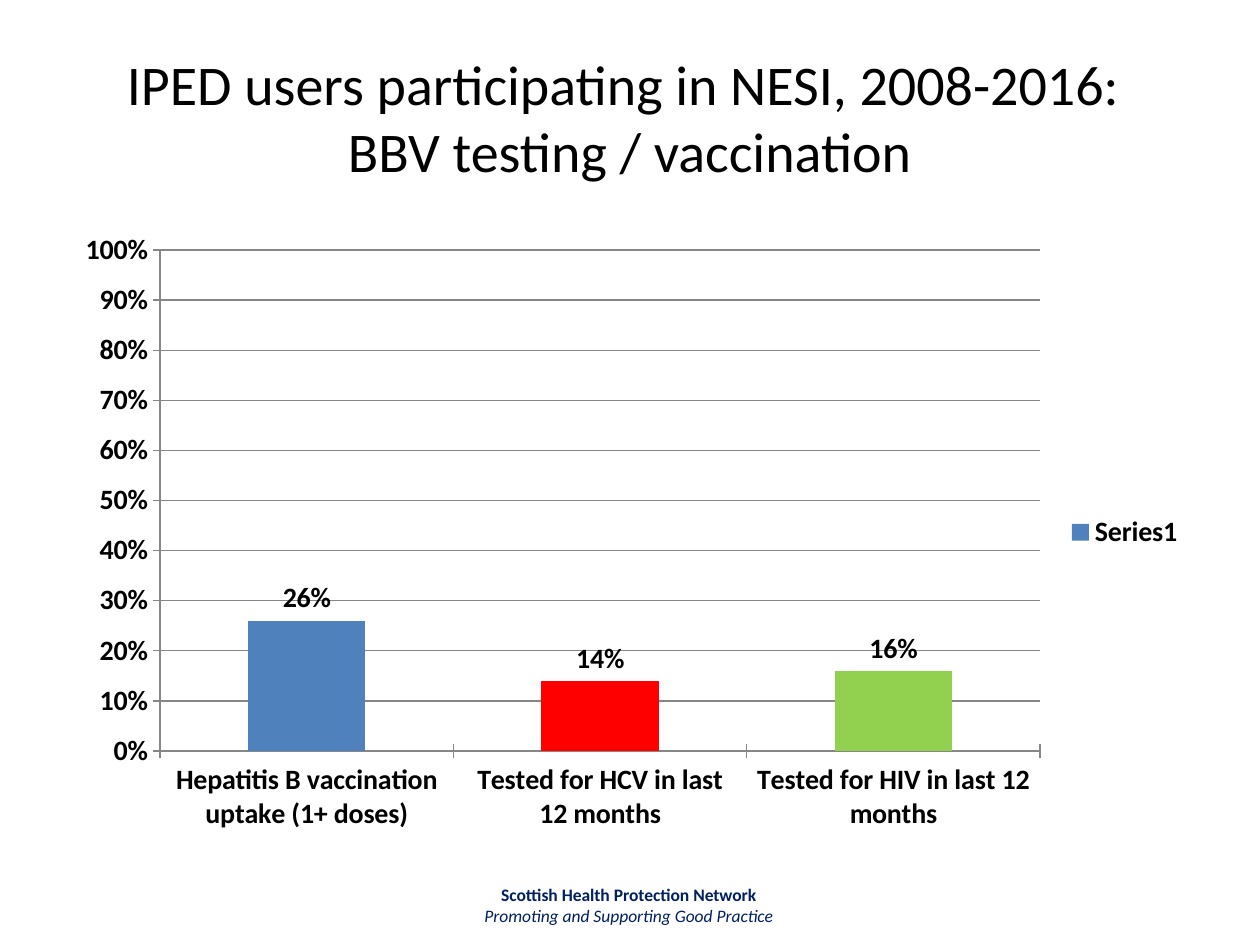
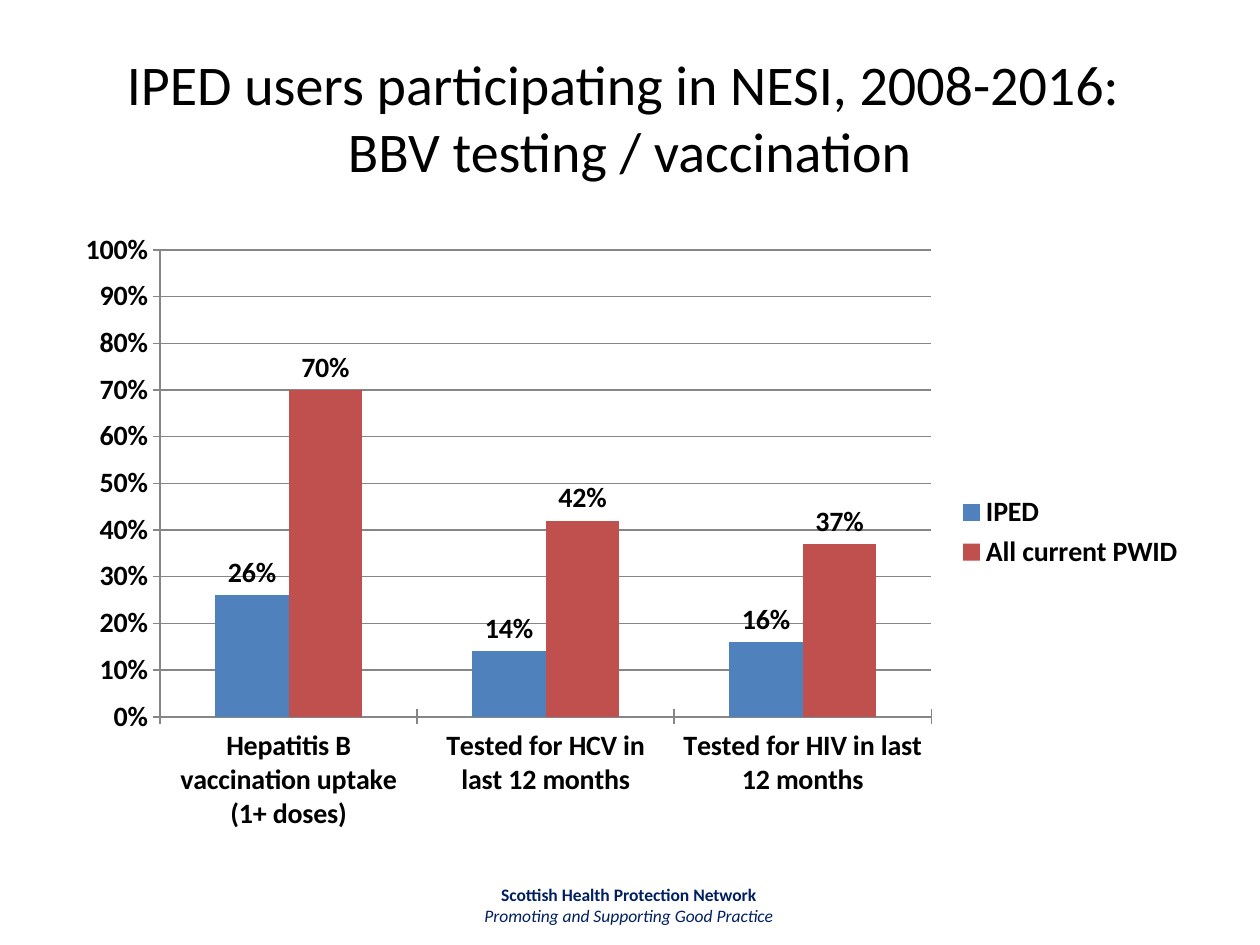
from dataclasses import dataclass, field

from pptx import Presentation
from pptx.chart.data import CategoryChartData
from pptx.dml.color import RGBColor
from pptx.enum.chart import XL_CHART_TYPE, XL_LABEL_POSITION, XL_LEGEND_POSITION, XL_TICK_MARK
from pptx.enum.text import MSO_ANCHOR, PP_ALIGN
from pptx.slide import Slide
from pptx.text.text import TextFrame
from pptx.util import Inches, Pt


@dataclass(frozen=True)
class Theme:
    font: str = "Calibri"
    text: RGBColor = RGBColor.from_string("000000")
    navy: RGBColor = RGBColor.from_string("002060")
    blue: RGBColor = RGBColor.from_string("4F81BD")
    brick: RGBColor = RGBColor.from_string("C0504D")
    red: RGBColor = RGBColor.from_string("FF0000")
    green: RGBColor = RGBColor.from_string("92D050")
    axis: RGBColor = RGBColor.from_string("868686")
    title_size: Pt = Pt(32)
    chart_size: Pt = Pt(16)
    footer_size: Pt = Pt(10)


@dataclass(frozen=True)
class Series:
    name: str
    values: tuple[float, ...]
    color: RGBColor
    point_colors: dict[int, RGBColor] = field(default_factory=dict)


THEME = Theme()
TITLE = "IPED users participating in NESI, 2008-2016: \vBBV testing / vaccination"
FOOTER = "Scottish Health Protection Network \nPromoting and Supporting Good Practice "
PERCENT = "###0%"
CATEGORIES = (
    "Hepatitis B vaccination uptake (1+ doses)",
    "Tested for HCV in last 12 months",
    "Tested for HIV in last 12 months",
)
IPED_VALUES = (0.26, 0.14, 0.16)
CHARTS = (
    (Series("Series1", IPED_VALUES, THEME.blue, {1: THEME.red, 2: THEME.green}),),
    (
        Series("IPED", IPED_VALUES, THEME.blue),
        Series("All current PWID", (0.7, 0.42, 0.37), THEME.brick),
    ),
)


def add_text(slide: Slide, text: str, left: float, top: float, width: float, height: float,
             size: Pt, color: RGBColor) -> TextFrame:
    box = slide.shapes.add_textbox(Inches(left), Inches(top), Inches(width), Inches(height))
    text_frame = box.text_frame
    text_frame.word_wrap = True
    text_frame.text = text
    for paragraph in text_frame.paragraphs:
        paragraph.alignment = PP_ALIGN.CENTER
        for run in paragraph.runs:
            run.font.name = THEME.font
            run.font.size = size
            run.font.color.rgb = color
    return text_frame


def add_footer(slide: Slide) -> None:
    text_frame = add_text(slide, FOOTER, 3.42, 6.97, 3.17, 0.4, THEME.footer_size, THEME.navy)
    network, motto = text_frame.paragraphs
    network.runs[0].font.bold = True
    motto.runs[0].font.italic = True


def add_title(slide: Slide) -> None:
    text_frame = add_text(slide, TITLE, 0.5, 0.3, 9, 1.25, THEME.title_size, THEME.text)
    text_frame.vertical_anchor = MSO_ANCHOR.MIDDLE


def add_uptake_chart(slide: Slide, series_list: tuple[Series, ...]) -> None:
    data = CategoryChartData(number_format=PERCENT)
    data.categories = CATEGORIES
    for series in series_list:
        data.add_series(series.name, series.values)
    chart = slide.shapes.add_chart(
        XL_CHART_TYPE.COLUMN_CLUSTERED, Inches(0.5), Inches(1.75), Inches(9), Inches(4.95), data
    ).chart
    chart.has_title = False
    chart.font.name = THEME.font
    chart.font.size = THEME.chart_size
    chart.font.bold = True
    chart.font.color.rgb = THEME.text
    chart.has_legend = True
    chart.legend.position = XL_LEGEND_POSITION.RIGHT
    chart.legend.include_in_layout = False

    value_axis = chart.value_axis
    value_axis.minimum_scale = 0
    value_axis.maximum_scale = 1
    value_axis.major_unit = 0.1
    value_axis.has_major_gridlines = True
    value_axis.major_gridlines.format.line.color.rgb = THEME.axis
    value_axis.tick_labels.number_format = PERCENT
    value_axis.tick_labels.number_format_is_linked = False
    for axis in (chart.category_axis, value_axis):
        axis.major_tick_mark = XL_TICK_MARK.CROSS
        axis.format.line.color.rgb = THEME.axis

    plot = chart.plots[0]
    plot.vary_by_categories = False
    plot.gap_width = 150
    plot.overlap = 0
    for column, series in zip(plot.series, series_list):
        column.format.fill.solid()
        column.format.fill.fore_color.rgb = series.color
        for index, color in series.point_colors.items():
            fill = column.points[index].format.fill
            fill.solid()
            fill.fore_color.rgb = color
        labels = column.data_labels
        labels.show_value = True
        labels.number_format = PERCENT
        labels.number_format_is_linked = False
        labels.position = XL_LABEL_POSITION.OUTSIDE_END


def main() -> None:
    presentation = Presentation()
    presentation.slide_width = Inches(10)
    presentation.slide_height = Inches(7.5)
    for series_list in CHARTS:
        slide = presentation.slides.add_slide(presentation.slide_layouts[6])
        add_footer(slide)
        add_title(slide)
        add_uptake_chart(slide, series_list)
    presentation.save("out.pptx")


if __name__ == "__main__":
    main()
